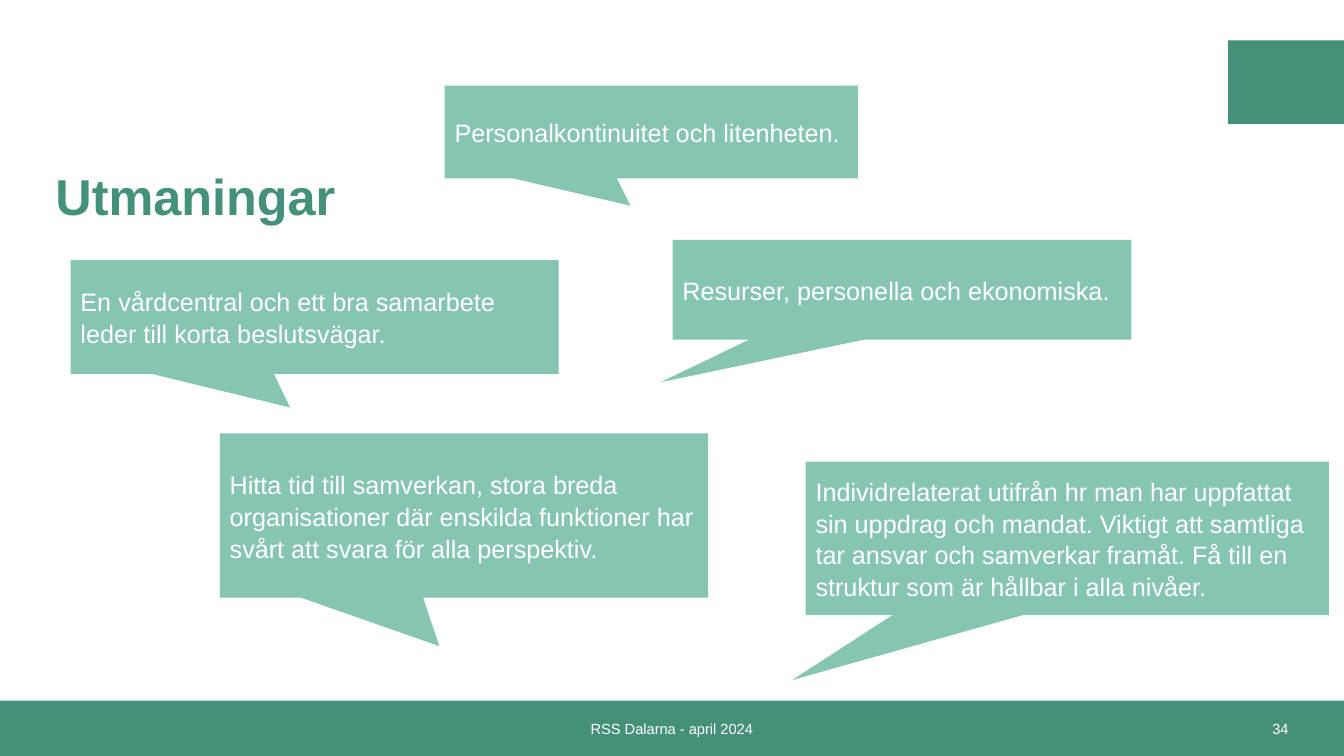
from pptx import Presentation
from pptx.dml.color import RGBColor
from pptx.enum import shapes, text
from pptx.util import Inches, Pt

COLORS = {"dark": "45907A", "light": "87C5B3", "white": "FFFFFF"}
FONT = "Arial"
TAIL_RIGHT = (-0.05, 0.795)
TAIL_LEFT = (-0.526, 0.926)

# Box (left, top, width, height), tail tip, wording
CALLOUTS = [
    ((0.7, 2.58, 4.84, 1.13), TAIL_RIGHT,
     "En vårdcentral och ett bra samarbete leder till korta beslutsvägar."),
    ((6.67, 2.38, 4.55, 0.99), TAIL_LEFT,
     "Resurser, personella och ekonomiska."),
    ((4.41, 0.85, 4.1, 0.92), TAIL_RIGHT,
     "Personalkontinuitet och litenheten."),
    ((7.99, 4.58, 5.19, 1.52), TAIL_LEFT,
     "Individrelaterat utifrån hr man har uppfattat sin uppdrag och mandat. "
     "Viktigt att samtliga tar ansvar och samverkar framåt. "
     "Få till en struktur som är hållbar i alla nivåer."),
    ((2.18, 4.3, 4.84, 1.63), TAIL_RIGHT,
     "Hitta tid till samverkan, stora breda organisationer där enskilda "
     "funktioner har svårt att svara för alla perspektiv."),
]


def inches(box):
    return [Inches(length) for length in box]


def write(holder, wording, size, color="white", bold=False,
          align=text.PP_ALIGN.LEFT, spacing=1.0):
    frame = holder.text_frame
    frame.word_wrap = True
    frame.auto_size = text.MSO_AUTO_SIZE.NONE
    frame.vertical_anchor = text.MSO_ANCHOR.MIDDLE
    frame.text = wording
    paragraph = frame.paragraphs[0]
    paragraph.alignment = align
    paragraph.line_spacing = spacing
    font = paragraph.runs[0].font
    font.name, font.size, font.bold = FONT, Pt(size), bold
    font.color.rgb = RGBColor.from_string(COLORS[color])


def add_block(slide, kind, box, color):
    block = slide.shapes.add_shape(kind, *inches(box))
    block.shadow.inherit = False
    block.fill.solid()
    block.fill.fore_color.rgb = RGBColor.from_string(COLORS[color])
    block.line.fill.background()
    return block


def add_corner(slide, box):
    add_block(slide, shapes.MSO_SHAPE.RECTANGLE, box, "dark")


def add_footer(slide, box):
    left, top, width, height = box
    add_block(slide, shapes.MSO_SHAPE.RECTANGLE, box, "dark")
    name_width, number_width = 5.5, 3
    name_left = left + (width - name_width) / 2
    number_left = left + width - number_width - 0.45
    for x, w, wording, align in [
        (name_left, name_width, "RSS Dalarna - april 2024", text.PP_ALIGN.CENTER),
        (number_left, number_width, "34", text.PP_ALIGN.RIGHT),
    ]:
        label = slide.shapes.add_textbox(*inches((x, top, w, height)))
        write(label, wording, 10.5, align=align)


def add_title(slide, box):
    title = slide.shapes.title
    title.left, title.top, title.width, title.height = inches(box)
    write(title, "Utmaningar", 36, color="dark", bold=True, spacing=0.9)


def add_callout(slide, box, tail, wording):
    callout = add_block(slide, shapes.MSO_SHAPE.RECTANGULAR_CALLOUT, box, "light")
    callout.adjustments[0], callout.adjustments[1] = tail
    write(callout, wording, 18, spacing=1.05)


def main():
    deck = Presentation()
    deck.slide_width, deck.slide_height = Inches(13.33), Inches(7.5)
    slide = deck.slides.add_slide(deck.slide_layouts[5])

    # Frame of the slide
    add_footer(slide, (0, 6.95, 13.33, 0.55))
    add_corner(slide, (12.18, 0.4, 1.15, 0.83))

    # Title and speech bubbles
    add_title(slide, (0.45, 1.32, 11.39, 1.32))
    for box, tail, wording in CALLOUTS:
        add_callout(slide, box, tail, wording)

    deck.save("out.pptx")


if __name__ == "__main__":
    main()
